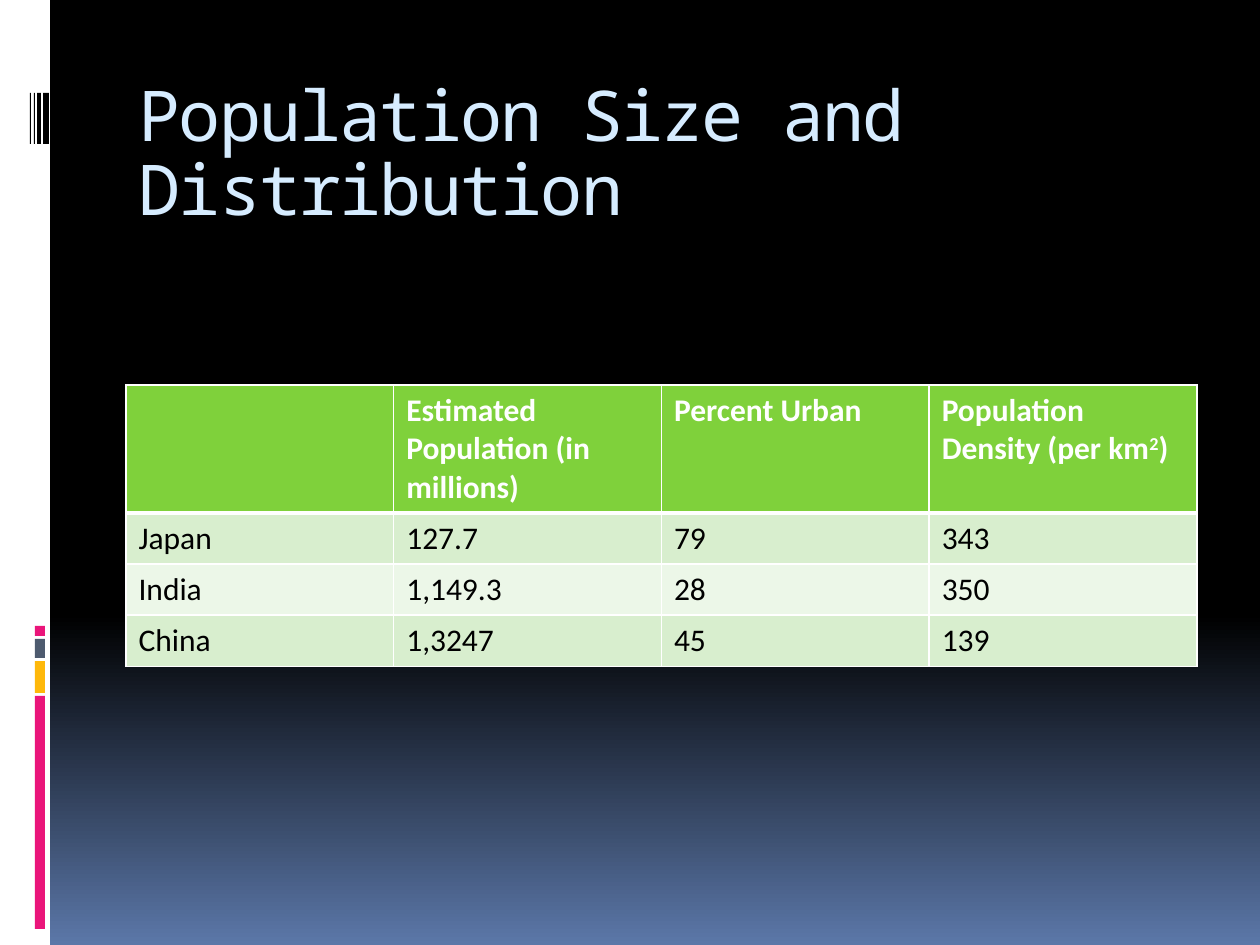
from lxml.etree import SubElement
from pptx import Presentation
from pptx.dml.color import RGBColor
from pptx.enum.shapes import MSO_SHAPE as SHAPE
from pptx.enum.text import MSO_ANCHOR as ANCHOR, MSO_AUTO_SIZE as AUTO, PP_ALIGN as ALIGN
from pptx.oxml.ns import qn
from pptx.util import Pt

SCALE = 914400 / 126
WHITE, BLACK, PINK = "FFFFFF", "000000", "EA157A"
HEADS = ["", "Estimated Population (in millions)", "Percent Urban", "Population Density (per km"]
ROWS = [
    ["Japan", "127.7", "79", "343"],
    ["India", "1,149.3", "28", "350"],
    ["China", "1,3247", "45", "139"],
]


def px(n):
    """Turn pixels into EMU."""
    return round(n * SCALE)


def rgb(value):
    """Turn a hex string into a colour."""
    return RGBColor.from_string(value)


def add_text(p, text, size=18, color=BLACK, font="Calibri", bold=False, **attrs):
    """Add a formatted run, with extra run attributes such as spc or baseline."""
    r = p.add_run()
    r.text = text
    r.font.size, r.font.name, r.font.bold = Pt(size), font, bold
    r.font.color.rgb = rgb(color)
    for name, value in attrs.items():
        r.font._element.set(name, str(value))


def add_rect(s, x, y, w, h, color):
    """Add a plain filled rectangle."""
    sp = s.shapes.add_shape(SHAPE.RECTANGLE, px(x), px(y), px(w), px(h))
    sp.shadow.inherit = False
    sp.fill.solid()
    sp.fill.fore_color.rgb = rgb(color)
    sp.line.fill.background()


def add_background(s):
    """Fade the background from black to blue."""
    fill = s.background.fill
    fill.gradient()
    fill.gradient_angle = 270
    for stop, (pos, color) in zip(fill.gradient_stops, [(0.65, BLACK), (1, "5B77A8")]):
        stop.position = pos
        stop.color.rgb = rgb(color)


def add_sidebar(s, x, y, w, h):
    """Draw the white strip with its barcode and coloured bars."""
    add_rect(s, x, y, w, h, WHITE)
    for dx, width in [(43, 6), (37, 4), (34, 1), (30, 1)]:
        add_rect(s, x + dx, y + 93, width, 51, BLACK)
    top = y + 626
    for height, color in [(10, PINK), (19, "4E5B6F"), (32, "FEB80A"), (233, PINK)]:
        add_rect(s, x + 35, top, 10, height, color)
        top += height + 3


def add_title(s, x, y, w, h):
    """Place and format the title placeholder."""
    sp = s.shapes.title
    sp.left, sp.top, sp.width, sp.height = px(x), px(y), px(w), px(h)
    tf = sp.text_frame
    tf.word_wrap, tf.auto_size, tf.vertical_anchor = True, AUTO.NONE, ANCHOR.TOP
    tf.margin_top = px(11)
    p = tf.paragraphs[0]
    p.alignment, p.line_spacing = ALIGN.LEFT, 0.88
    add_text(p, "Population Size and Distribution", 40, "D6ECFF", "Noto Sans Mono", spc=-100)


def set_borders(cell, **widths):
    """Give the cell white borders of the given point widths."""
    tc_pr = cell._tc.get_or_add_tcPr()
    for i, (side, width) in enumerate(widths.items()):
        ln = tc_pr.makeelement(qn(f"a:{side}"), {"w": str(Pt(width))})
        SubElement(SubElement(ln, qn("a:solidFill")), qn("a:srgbClr"), val=WHITE)
        tc_pr.insert(i, ln)


def add_population_table(s, x, y, w, head_h, row_h):
    """Add the table with a green header and banded rows."""
    data = [HEADS] + ROWS
    h = head_h + row_h * len(ROWS)
    table = s.shapes.add_table(len(data), len(HEADS), px(x), px(y), px(w), px(h)).table
    for col in table.columns:
        col.width = px(w / len(HEADS))
    for i, values in enumerate(data):
        head = i == 0
        table.rows[i].height = px(head_h if head else row_h)
        color = WHITE if head else BLACK
        for j, text in enumerate(values):
            cell = table.cell(i, j)
            cell.fill.solid()
            cell.fill.fore_color.rgb = rgb("7FD13B" if head else "D8EECE" if i % 2 else "ECF7E8")
            set_borders(cell, lnL=1, lnR=1, lnT=3 if i == 1 else 1, lnB=3 if head else 1)
            if text:
                add_text(cell.text_frame.paragraphs[0], text, color=color, bold=head)
    p = table.cell(0, 3).text_frame.paragraphs[0]
    add_text(p, "2", color=WHITE, bold=True, baseline=30000)
    add_text(p, ")", color=WHITE, bold=True)


def main():
    """Build and save the slide."""
    prs = Presentation()
    prs.slide_width, prs.slide_height = px(1260), px(945)
    s = prs.slides.add_slide(prs.slide_layouts[5])
    add_background(s)
    add_sidebar(s, 0, 0, 50, 945)
    add_title(s, 126, 71, 1071, 126)
    add_population_table(s, 126, 385, 1071, 128, 51)
    prs.save("out.pptx")


if __name__ == "__main__":
    main()
